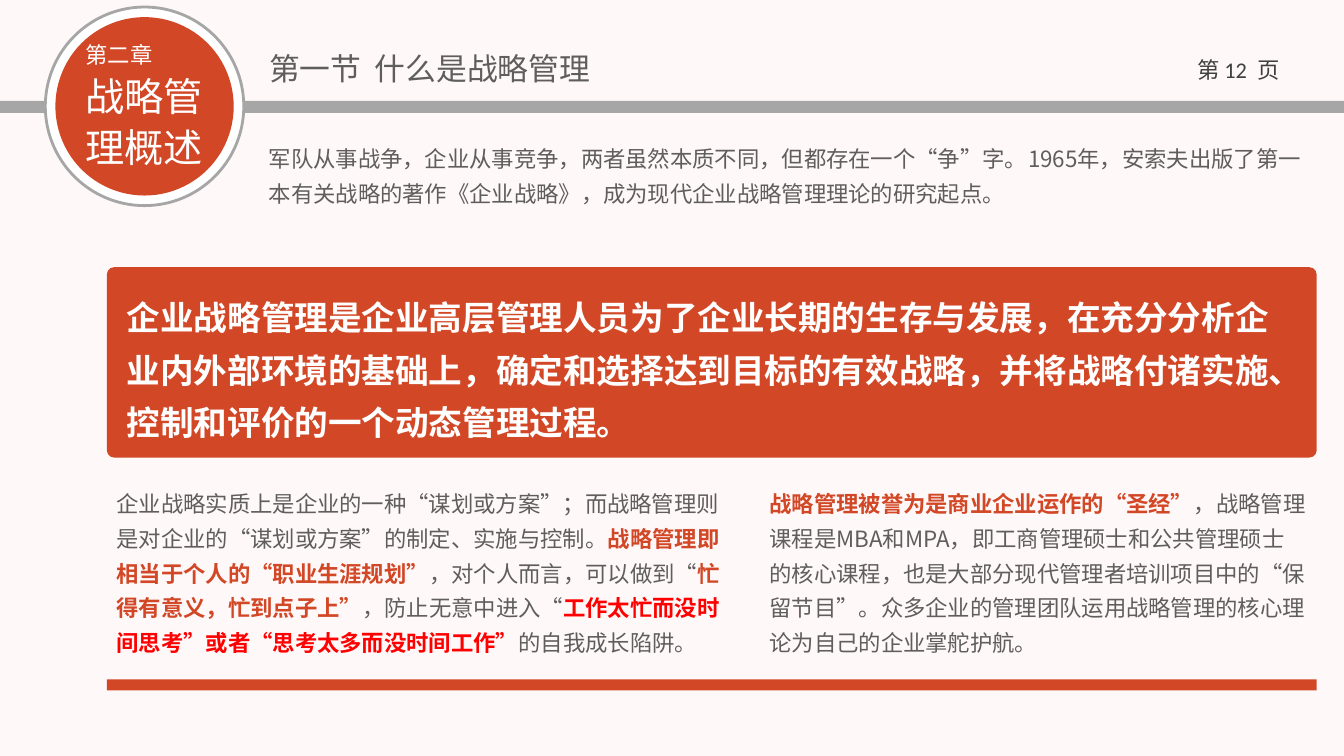
from lxml import etree
from pptx import Presentation
from pptx.dml.color import RGBColor
from pptx.enum.shapes import MSO_SHAPE
from pptx.enum.text import MSO_ANCHOR, MSO_AUTO_SIZE, PP_ALIGN
from pptx.oxml.ns import qn
from pptx.util import Pt

PX = 9144  # 100 px to the inch
SLIDE_WIDTH, SLIDE_HEIGHT = 1334, 750
TITLE_ONLY = 5

RECT, ROUNDED, OVAL = MSO_SHAPE.RECTANGLE, MSO_SHAPE.ROUNDED_RECTANGLE, MSO_SHAPE.OVAL
LEFT, CENTER = PP_ALIGN.LEFT, PP_ALIGN.CENTER
TOP = MSO_ANCHOR.TOP
NO_AUTOFIT = MSO_AUTO_SIZE.NONE

CJK_FONT, LATIN_FONT = "Noto Sans CJK SC", "Calibri"
BACKGROUND = RGBColor(0xFF, 0xF8, 0xF8)
WHITE = RGBColor(0xFF, 0xFF, 0xFF)
SILVER = RGBColor(0xA6, 0xA6, 0xA6)
ORANGE = RGBColor(0xD2, 0x47, 0x26)
RED = RGBColor(0xFF, 0x00, 0x00)
BODY_GRAY = RGBColor(0x5F, 0x5E, 0x5C)
PAGE_GRAY = RGBColor(0x40, 0x40, 0x40)

CONTENT_LEFT, CONTENT_WIDTH = 106, 1201
HEADING_LEFT = 257
COLUMN_TOP, COLUMN_HEIGHT = 473, 185

INTRO = ("军队从事战争，企业从事竞争，两者虽然本质不同，但都存在一个“争”字。1965年，"
         "安索夫出版了第一本有关战略的著作《企业战略》，成为现代企业战略管理理论的研究起点。")
DEFINITION = ("企业战略管理是企业高层管理人员为了企业长期的生存与发展，在充分分析企业内外部环境的基础上，"
              "确定和选择达到目标的有效战略，并将战略付诸实施、控制和评价的一个动态管理过程。")
ESSENCE = [
    ("企业战略实质上是企业的一种“谋划或方案”；而战略管理则是对企业的“谋划或方案”的制定、实施与控制。", {}),
    ("战略管理即相当于个人的“职业生涯规划”", {"color": ORANGE, "bold": True}),
    ("，对个人而言，可以做到“", {}),
    ("忙得有意义，忙到点子上”", {"color": ORANGE, "bold": True}),
    ("，防止无意中进入“", {}),
    ("工作太忙而没时间思考”或者“思考太多而没时间工作”", {"color": RED, "bold": True}),
    ("的自我成长陷阱。", {}),
]
REPUTATION = [
    ("战略管理被誉为是商业企业运作的“圣经”", {"color": ORANGE, "bold": True}),
    ("，战略管理课程是MBA和MPA，即工商管理硕士和公共管理硕士的核心课程，也是大部分现代管理者"
     "培训项目中的“保留节目”。众多企业的管理团队运用战略管理的核心理论为自己的企业掌舵护航。", {}),
]


def add_run(paragraph, text, size=16, color=BODY_GRAY, bold=False, font=CJK_FONT):
    run = paragraph.add_run()
    run.text = text
    run.font.size = Pt(size)
    run.font.bold = bold
    run.font.color.rgb = color
    run.font.name = font
    east_asian = etree.SubElement(run.font._element, qn("a:ea"))
    east_asian.set("typeface", CJK_FONT)


def write_paragraph(paragraph, content, align=LEFT, line=1.0, before=0, after=0, **run_format):
    """Content is a string, or (text, format) pairs that override run_format."""
    paragraph.alignment = align
    paragraph.line_spacing = line
    paragraph.space_before, paragraph.space_after = Pt(before), Pt(after)
    runs = [(content, {})] if isinstance(content, str) else content
    for text, override in runs:
        add_run(paragraph, text, **{**run_format, **override})


def place(shape, left, top, width, height):
    shape.left, shape.top = left * PX, top * PX
    shape.width, shape.height = width * PX, height * PX


def add_text(slide, box, content, **text_format):
    textbox = slide.shapes.add_textbox(*(length * PX for length in box))
    textbox.text_frame.word_wrap = True
    write_paragraph(textbox.text_frame.paragraphs[0], content, **text_format)
    return textbox.text_frame


def add_block(slide, kind, box, fill, outline=None):
    block = slide.shapes.add_shape(kind, *(length * PX for length in box))
    block.shadow.inherit = False
    block.fill.solid()
    block.fill.fore_color.rgb = fill
    if outline is None:
        block.line.fill.background()
    else:
        block.line.color.rgb = outline
        block.line.width = Pt(2)
    return block


def add_chapter_badge(slide):
    add_block(slide, OVAL, (45, 7, 197, 197), WHITE, outline=SILVER)
    add_block(slide, OVAL, (55, 17, 177, 177), ORANGE)
    frame = add_text(slide, (75, 36, 173, 140), "第二章", color=WHITE, before=4, after=3)
    for name_line in ("战略管", "理概述"):
        write_paragraph(frame.add_paragraph(), name_line, size=28, color=WHITE, after=3)


def set_section_title(slide, text):
    title = slide.shapes.title
    place(title, HEADING_LEFT, 44, 544, 47)
    frame = title.text_frame
    frame.word_wrap = True
    frame.auto_size = NO_AUTOFIT
    frame.vertical_anchor = TOP
    write_paragraph(frame.paragraphs[0], text, size=22)


def main():
    prs = Presentation()
    prs.slide_width, prs.slide_height = SLIDE_WIDTH * PX, SLIDE_HEIGHT * PX
    slide = prs.slides.add_slide(prs.slide_layouts[TITLE_ONLY])
    slide.background.fill.solid()
    slide.background.fill.fore_color.rgb = BACKGROUND

    add_block(slide, RECT, (0, 100, SLIDE_WIDTH, 12), SILVER)
    add_chapter_badge(slide)
    page_number = [("第 ", {}), ("12  ", {"font": LATIN_FONT}), ("页", {})]
    add_text(slide, (1169, 51, 120, 40), page_number, align=CENTER, color=PAGE_GRAY)

    set_section_title(slide, "第一节  什么是战略管理")
    add_text(slide, (HEADING_LEFT, 131, 1050, 77), INTRO, line=1.3, after=6)

    panel = add_block(slide, ROUNDED, (CONTENT_LEFT, 265, CONTENT_WIDTH, 189), ORANGE)
    panel.adjustments[0] = 0.04
    add_text(slide, (116, 278, 1183, 162), DEFINITION,
             size=24, color=WHITE, bold=True, line=1.3, after=6)

    for left, width, column in ((CONTENT_LEFT, 624, ESSENCE), (754, 553, REPUTATION)):
        add_text(slide, (left, COLUMN_TOP, width, COLUMN_HEIGHT), column, line=1.3)
    add_block(slide, RECT, (CONTENT_LEFT, 674, CONTENT_WIDTH, 11), ORANGE)

    prs.save("out.pptx")


if __name__ == "__main__":
    main()
